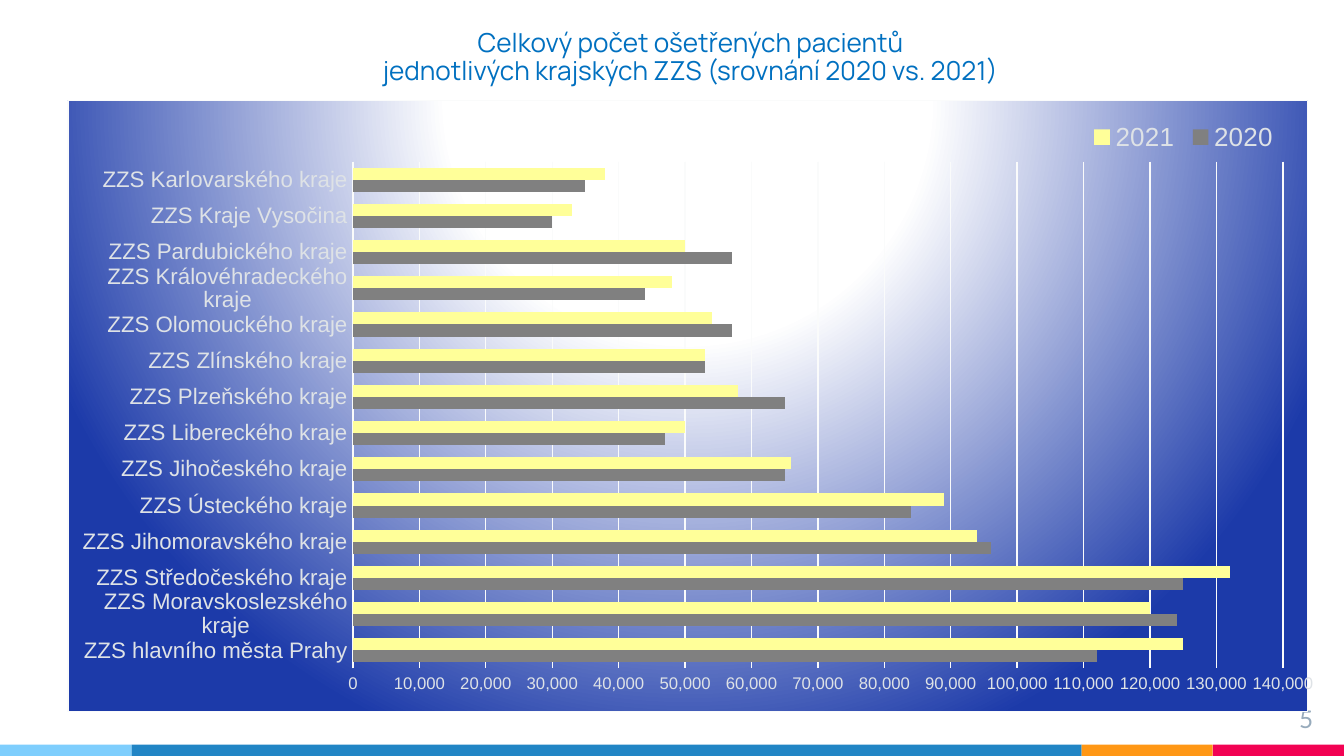
from dataclasses import dataclass
from pptx import Presentation
from pptx.chart.data import CategoryChartData
from pptx.dml.color import RGBColor
from pptx.enum.chart import XL_CHART_TYPE, XL_LEGEND_POSITION, XL_TICK_MARK
from pptx.enum.shapes import MSO_SHAPE
from pptx.enum.text import PP_ALIGN
from pptx.oxml import parse_xml
from pptx.oxml.ns import nsdecls
from pptx.util import Pt


@dataclass(frozen=True)
class Theme:
    sky: str = "7ECEFD"
    blue: str = "2185C5"
    orange: str = "FF9715"
    red: str = "F20253"
    title: str = "0070C0"
    number: str = "97ABBC"
    label: str = "DEE2E6"
    rule: str = "FAFBFB"
    glow: str = "FFFFFF"
    navy: str = "1C3AA9"
    gray: str = "808080"
    yellow: str = "FFFF99"
    title_size: int = 14
    number_size: int = 13
    legend_size: int = 14
    category_size: int = 12
    value_size: int = 9


theme = Theme()


def style_font(font, name, size, color):
    formats = {"name": name, "size": Pt(size), "bold": False}
    for attribute, value in formats.items():
        setattr(font, attribute, value)
    font.color.rgb = RGBColor.from_string(color)


def place_in_chart(part, index, target, x, y, w, h):
    for old_layout in part.xpath("c:layout"):
        part.remove(old_layout)
    part.insert(index, parse_xml(
        f'<c:layout {nsdecls("c")}><c:manualLayout>{target}'
        '<c:xMode val="edge"/><c:yMode val="edge"/>'
        f'<c:x val="{x}"/><c:y val="{y}"/><c:w val="{w}"/><c:h val="{h}"/>'
        '</c:manualLayout></c:layout>'))


presentation = Presentation()
presentation.slide_width, presentation.slide_height = Pt(720), Pt(405)
slide = presentation.slides.add_slide(presentation.slide_layouts[6])

strip_left = 0
for strip_width, color in [(70.5, theme.sky), (509, theme.blue),
                           (70.25, theme.orange), (70.25, theme.red)]:
    strip = slide.shapes.add_shape(
        MSO_SHAPE.RECTANGLE, Pt(strip_left), Pt(399), Pt(strip_width), Pt(6))
    strip.shadow.inherit = False
    strip.fill.solid()
    strip.fill.fore_color.rgb = RGBColor.from_string(color)
    strip.line.fill.background()
    strip_left += strip_width

page_number = slide.shapes.add_textbox(Pt(667.5), Pt(370), Pt(43), Pt(24.5)).text_frame
page_number.word_wrap = True
for side in ("left", "right", "top", "bottom"):
    setattr(page_number, f"margin_{side}", Pt(7.2))
page_number.text = "5"
page_number.paragraphs[0].alignment = PP_ALIGN.RIGHT
style_font(page_number.paragraphs[0].runs[0].font, "Lato", theme.number_size, theme.number)

patients = [
    ("ZZS hlavního města Prahy", 112000, 125000),
    ("ZZS Moravskoslezského kraje", 124000, 120000),
    ("ZZS Středočeského kraje", 125000, 132000),
    ("ZZS Jihomoravského kraje", 96000, 94000),
    ("ZZS Ústeckého kraje", 84000, 89000),
    ("ZZS Jihočeského kraje", 65000, 66000),
    ("ZZS Libereckého kraje", 47000, 50000),
    ("ZZS Plzeňského kraje", 65000, 58000),
    ("ZZS Zlínského kraje", 53000, 53000),
    ("ZZS Olomouckého kraje", 57000, 54000),
    ("ZZS Královéhradeckého kraje", 44000, 48000),
    ("ZZS Pardubického kraje", 57000, 50000),
    ("ZZS Kraje Vysočina", 30000, 33000),
    ("ZZS Karlovarského kraje", 35000, 38000),
]
regions, patients_2020, patients_2021 = zip(*patients)
comparison = CategoryChartData(number_format="#,##0")
comparison.categories = regions
comparison.add_series("2020", patients_2020)
comparison.add_series("2021", patients_2021)
chart = slide.shapes.add_chart(
    XL_CHART_TYPE.BAR_CLUSTERED, Pt(36), Pt(53.5), Pt(667.5), Pt(328), comparison).chart
chart.has_title = False
style_font(chart.font, "Arial", 10, theme.label)

bars = chart.plots[0]
bars.gap_width, bars.overlap, bars.vary_by_categories = 100, 0, False
for year, color in zip(bars.series, (theme.gray, theme.yellow)):
    year.format.fill.solid()
    year.format.fill.fore_color.rgb = RGBColor.from_string(color)
    year.invert_if_negative = False

region_axis, count_axis = chart.category_axis, chart.value_axis
for axis, size in ((region_axis, theme.category_size), (count_axis, theme.value_size)):
    axis.major_tick_mark = axis.minor_tick_mark = XL_TICK_MARK.NONE
    style_font(axis.tick_labels.font, "Arial", size, theme.label)
region_axis.has_major_gridlines = False
count_formats = {"minimum_scale": 0, "maximum_scale": 140000,
                 "major_unit": 10000, "has_major_gridlines": True}
for attribute, value in count_formats.items():
    setattr(count_axis, attribute, value)
count_axis.tick_labels.number_format = "#,##0"
count_axis.tick_labels.number_format_is_linked = False
count_axis.format.line.fill.background()
for line in (region_axis.format.line, count_axis.major_gridlines.format.line):
    line.color.rgb = RGBColor.from_string(theme.rule)
    line.width = Pt(0.75)

chart.has_legend = True
chart.legend.position = XL_LEGEND_POSITION.BOTTOM
chart.legend.include_in_layout = False
style_font(chart.legend.font, "Arial", theme.legend_size, theme.label)
place_in_chart(chart.element.xpath("c:chart/c:plotArea")[0], 0,
               '<c:layoutTarget val="inner"/>', 0.23, 0.1, 0.75, 0.83)
place_in_chart(chart.element.xpath("c:chart/c:legend")[0], 1, "", 0.82, 0.03, 0.16, 0.06)

gradient_stops = "".join(
    f'<a:gs pos="{position * 1000}"><a:srgbClr val="{color}"/></a:gs>'
    for position, color in ((0, theme.glow), (35, theme.glow), (100, theme.navy)))
chart.element.xpath("c:chart")[0].addnext(parse_xml(
    f'<c:spPr {nsdecls("c", "a")}><a:gradFill><a:gsLst>{gradient_stops}</a:gsLst>'
    '<a:path path="circle"><a:fillToRect l="50000" t="-80000" r="50000" b="180000"/></a:path>'
    f'</a:gradFill><a:ln w="{Pt(0.75)}"><a:solidFill><a:srgbClr val="{theme.rule}"/>'
    '</a:solidFill></a:ln></c:spPr>'))

heading = slide.shapes.add_textbox(Pt(190), Pt(12.25), Pt(360), Pt(41)).text_frame
heading.word_wrap = True
heading.text = ("Celkový počet ošetřených pacientů\n"
                "jednotlivých krajských ZZS (srovnání 2020 vs. 2021)")
for paragraph in heading.paragraphs:
    paragraph.alignment = PP_ALIGN.CENTER
    paragraph.line_spacing = 0.9
    style_font(paragraph.runs[0].font, "Manrope", theme.title_size, theme.title)

presentation.save("out.pptx")
